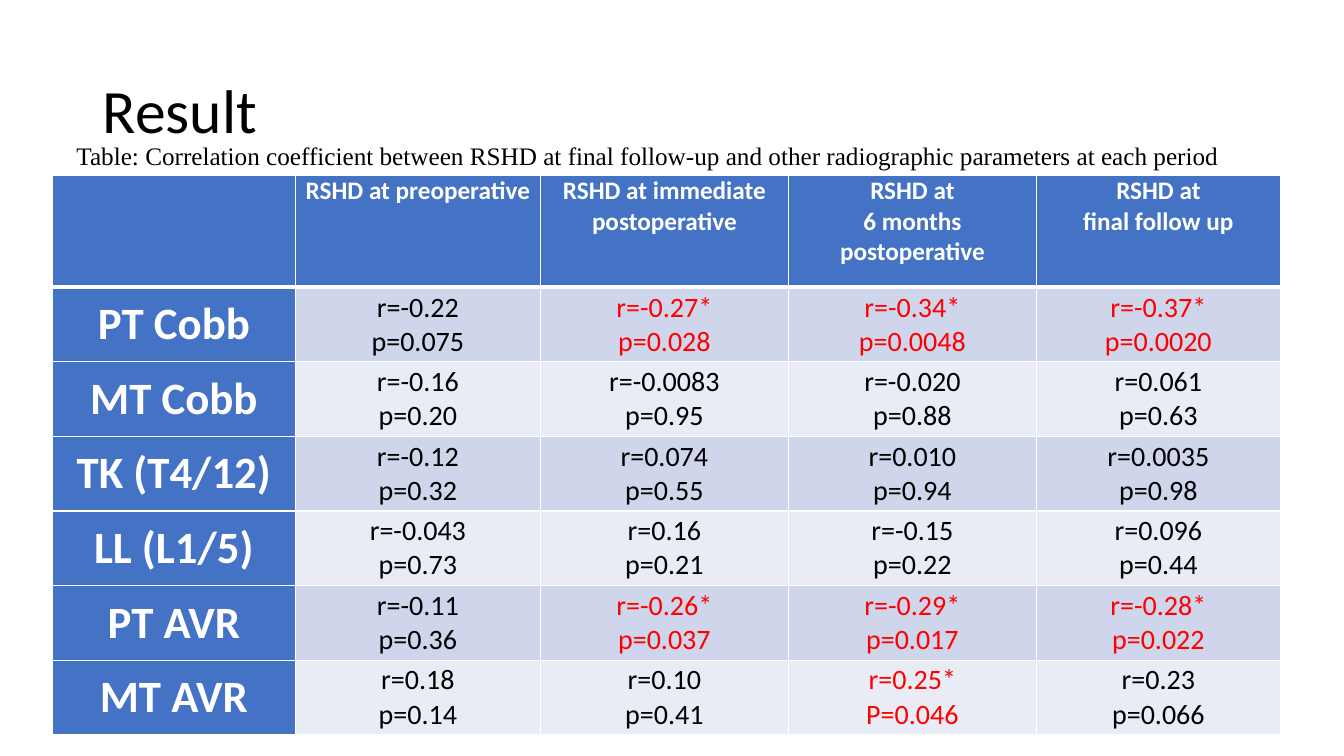
from dataclasses import dataclass

from lxml.etree import SubElement as Sub
from pptx import Presentation
from pptx.dml.color import RGBColor as RGB
from pptx.enum.text import MSO_ANCHOR as Anchor, MSO_AUTO_SIZE as Fit, PP_ALIGN as Align
from pptx.oxml.ns import qn
from pptx.util import Inches, Pt


@dataclass(frozen=True)
class Theme:
    sans: str = "Calibri"
    serif: str = "Times New Roman"
    black: str = "000000"
    white: str = "FFFFFF"
    red: str = "FF0000"
    blue: str = "4472C4"
    bands: tuple = ("CFD5EA", "E9EBF5")
    title: int = 44
    label: int = 32
    value: int = 20
    small: int = 18


# Table content: each result is "r|p", starred when significant
HEADS = ["", "RSHD at preoperative", "RSHD at immediate postoperative",
         "RSHD at|6 months postoperative", "RSHD at|final follow up"]
ROWS = [
    ["PT Cobb", "r=-0.22|p=0.075", "r=-0.27*|p=0.028", "r=-0.34*|p=0.0048", "r=-0.37*|p=0.0020"],
    ["MT Cobb", "r=-0.16|p=0.20", "r=-0.0083|p=0.95", "r=-0.020|p=0.88", "r=0.061|p=0.63"],
    ["TK (T4/12)", "r=-0.12|p=0.32", "r=0.074|p=0.55", "r=0.010|p=0.94", "r=0.0035|p=0.98"],
    ["LL (L1/5)", "r=-0.043|p=0.73", "r=0.16|p=0.21", "r=-0.15|p=0.22", "r=0.096|p=0.44"],
    ["PT AVR", "r=-0.11|p=0.36", "r=-0.26*|p=0.037", "r=-0.29*|p=0.017", "r=-0.28*|p=0.022"],
    ["MT AVR", "r=0.18|p=0.14", "r=0.10|p=0.41", "r=0.25*|P=0.046", "r=0.23|p=0.066"],
]
WIDTHS = [2.41, 2.43, 2.46, 2.46, 2.42]
HEIGHTS = [1.11] + [0.74] * len(ROWS)


class Deck:
    def __init__(self, theme):
        self.theme = theme
        self.prs = Presentation()
        self.prs.slide_width, self.prs.slide_height = Inches(13.33), Inches(7.5)
        self.slide = self.prs.slides.add_slide(self.prs.slide_layouts[5])

    def apply(self, item, form):
        for key, val in form.items():
            setattr(item, key, val)

    def text(self, frame, words, align, color, **font):
        for i, line in enumerate(words.split("|")):
            para = frame.add_paragraph() if i else frame.paragraphs[0]
            para.alignment = align
            run = para.add_run()
            run.text = line
            self.apply(run.font, {"name": self.theme.sans, **font})
            run.font.color.rgb = RGB.from_string(color)

    def place(self, item, box):
        sides = ("left", "top", "width", "height")
        self.apply(item, dict(zip(sides, map(Inches, box))))

    def title(self, words, box):
        shape = self.slide.shapes.title
        self.place(shape, box)
        frame = shape.text_frame
        self.apply(frame, {"word_wrap": True, "auto_size": Fit.NONE,
                           "vertical_anchor": Anchor.MIDDLE})
        self.text(frame, words, Align.LEFT, self.theme.black, size=Pt(self.theme.title))
        frame.paragraphs[0].line_spacing = 0.9

    def note(self, words, box):
        frame = self.slide.shapes.add_textbox(*map(Inches, box)).text_frame
        self.apply(frame, {"word_wrap": True, "auto_size": Fit.SHAPE_TO_FIT_TEXT})
        self.text(frame, words, Align.JUSTIFY, self.theme.black,
                  name=self.theme.serif, size=Pt(self.theme.small))

    def edges(self, cell, **points):
        props = cell._tc.get_or_add_tcPr()
        for side in "LRTB":
            line = Sub(props, qn(f"a:ln{side}"), w=str(Pt(points.get(side, 1))))
            fill = Sub(line, qn("a:solidFill"))
            Sub(fill, qn("a:srgbClr"), val=self.theme.white)

    def cell(self, cell, row, col, words):
        look = self.theme
        head, label = row == 0, col == 0
        # Heavy rule between the header and the body
        self.edges(cell, **({"B": 3} if head else {"T": 3} if row == 1 else {}))
        cell.fill.solid()
        tint = look.blue if head or label else look.bands[(row - 1) % 2]
        cell.fill.fore_color.rgb = RGB.from_string(tint)
        self.apply(cell, {"margin_left": Inches(0.07), "margin_right": Inches(0.07),
                          "margin_top": 0, "margin_bottom": 0,
                          "vertical_anchor": Anchor.TOP if head else Anchor.MIDDLE})
        if not words:
            return
        if head or label:
            color, size = look.white, look.small if head else look.label
        else:
            color, size = look.red if "*" in words else look.black, look.value
        self.text(cell.text_frame, words, Align.CENTER, color,
                  size=Pt(size), bold=head or label)

    def table(self, rows, left, top):
        box = (left, top, sum(WIDTHS), sum(HEIGHTS))
        grid = self.slide.shapes.add_table(len(rows), len(WIDTHS), *map(Inches, box)).table
        grid.first_col = True
        for column, width in zip(grid.columns, WIDTHS):
            column.width = Inches(width)
        for line, height in zip(grid.rows, HEIGHTS):
            line.height = Inches(height)
        for r, texts in enumerate(rows):
            for c, words in enumerate(texts):
                self.cell(grid.cell(r, c), r, c, words)


def main():
    deck = Deck(Theme())
    # Heading
    deck.title("Result", (0.92, 0.4, 11.5, 1.45))
    # Correlation table
    deck.table([HEADS] + ROWS, 0.52, 1.74)
    # Caption above the table
    deck.note("Table: Correlation coefficient between RSHD at final follow-up "
              "and other radiographic parameters at each period", (0.66, 1.34, 11.89, 0.4))
    deck.prs.save("out.pptx")


if __name__ == "__main__":
    main()
